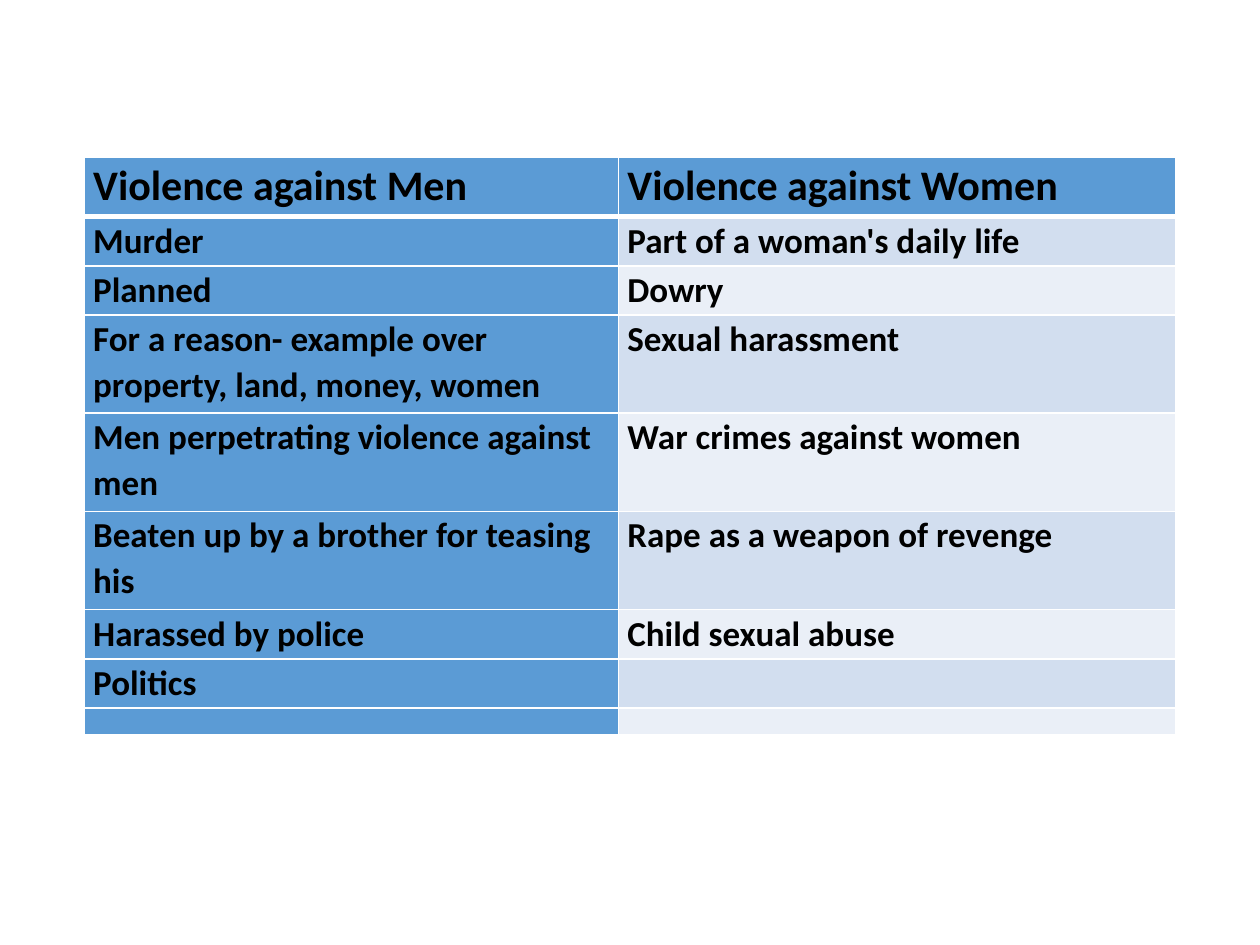
import pptx
import pptx.dml.color
import pptx.oxml.ns
import pptx.util
from lxml import etree

Inches, Pt = pptx.util.Inches, pptx.util.Pt

COLORS = {
    "accent": "5B9BD5",
    "odd_band": "D2DEEF",
    "even_band": "EAEFF7",
    "border": "FFFFFF",
    "text": "000000",
}
FONT = "Calibri"
HEADER_SIZE, BODY_SIZE, EMPTY_SIZE = 24, 20, 11
LEFT, TOP = 0.67, 1.25
COLUMN_WIDTHS = [4.24, 4.42]

# Row height, violence against men, violence against women
ROWS = [
    (0.47, "Violence against Men", "Violence against Women"),
    (0.39, "Murder", "Part of a woman's daily life"),
    (0.39, "Planned", "Dowry"),
    (0.78, "For a reason- example over property, land, money, women", "Sexual harassment"),
    (0.78, "Men perpetrating violence against men", "War crimes against women"),
    (0.78, "Beaten up by a brother for teasing his", "Rape as a weapon of revenge"),
    (0.39, "Harassed by police", "Child sexual abuse"),
    (0.39, "Politics", ""),
    (0.21, "", ""),
]


def rgb(name):
    return pptx.dml.color.RGBColor.from_string(COLORS[name])


def add_borders(cell, row_index):
    """Draw thin borders, with a thick one between header and body."""
    properties = cell._tc.get_or_add_tcPr()
    thick_side = {0: "lnB", 1: "lnT"}.get(row_index)
    for side in ("lnL", "lnR", "lnT", "lnB"):
        width = Pt(3 if side == thick_side else 1)
        line = etree.SubElement(properties, pptx.oxml.ns.qn(f"a:{side}"), w=str(width))
        fill = etree.SubElement(line, pptx.oxml.ns.qn("a:solidFill"))
        etree.SubElement(fill, pptx.oxml.ns.qn("a:srgbClr"), val=COLORS["border"])


def fill_name(row_index, column_index):
    if row_index == 0 or column_index == 0:
        return "accent"
    return "odd_band" if row_index % 2 else "even_band"


def write_text(cell, text, size):
    cell.margin_left = cell.margin_right = Inches(0.07)
    cell.margin_top = cell.margin_bottom = 0
    paragraph = cell.text_frame.paragraphs[0]
    paragraph.text = text
    paragraph.line_spacing = 1.07
    for run in paragraph.runs:
        run.font.name = FONT
        run.font.size = Pt(size)
        run.font.bold = True
        run.font.color.rgb = rgb("text")
    if not text:  # keeps the empty row low
        etree.SubElement(paragraph._p, pptx.oxml.ns.qn("a:endParaRPr"), sz=str(EMPTY_SIZE * 100))


def add_comparison_table(slide):
    table = slide.shapes.add_table(
        len(ROWS), len(COLUMN_WIDTHS), Inches(LEFT), Inches(TOP),
        Inches(sum(COLUMN_WIDTHS)), Inches(sum(row[0] for row in ROWS)),
    ).table
    for column, width in zip(table.columns, COLUMN_WIDTHS):
        column.width = Inches(width)
    for row_index, (height, *texts) in enumerate(ROWS):
        table.rows[row_index].height = Inches(height)
        for column_index, text in enumerate(texts):
            cell = table.cell(row_index, column_index)
            write_text(cell, text, BODY_SIZE if row_index else HEADER_SIZE)
            add_borders(cell, row_index)
            cell.fill.solid()
            cell.fill.fore_color.rgb = rgb(fill_name(row_index, column_index))


def main():
    presentation = pptx.Presentation()
    presentation.slide_width = Inches(10)
    presentation.slide_height = Inches(7.5)
    slide = presentation.slides.add_slide(presentation.slide_layouts[6])
    add_comparison_table(slide)
    presentation.save("out.pptx")


if __name__ == "__main__":
    main()
